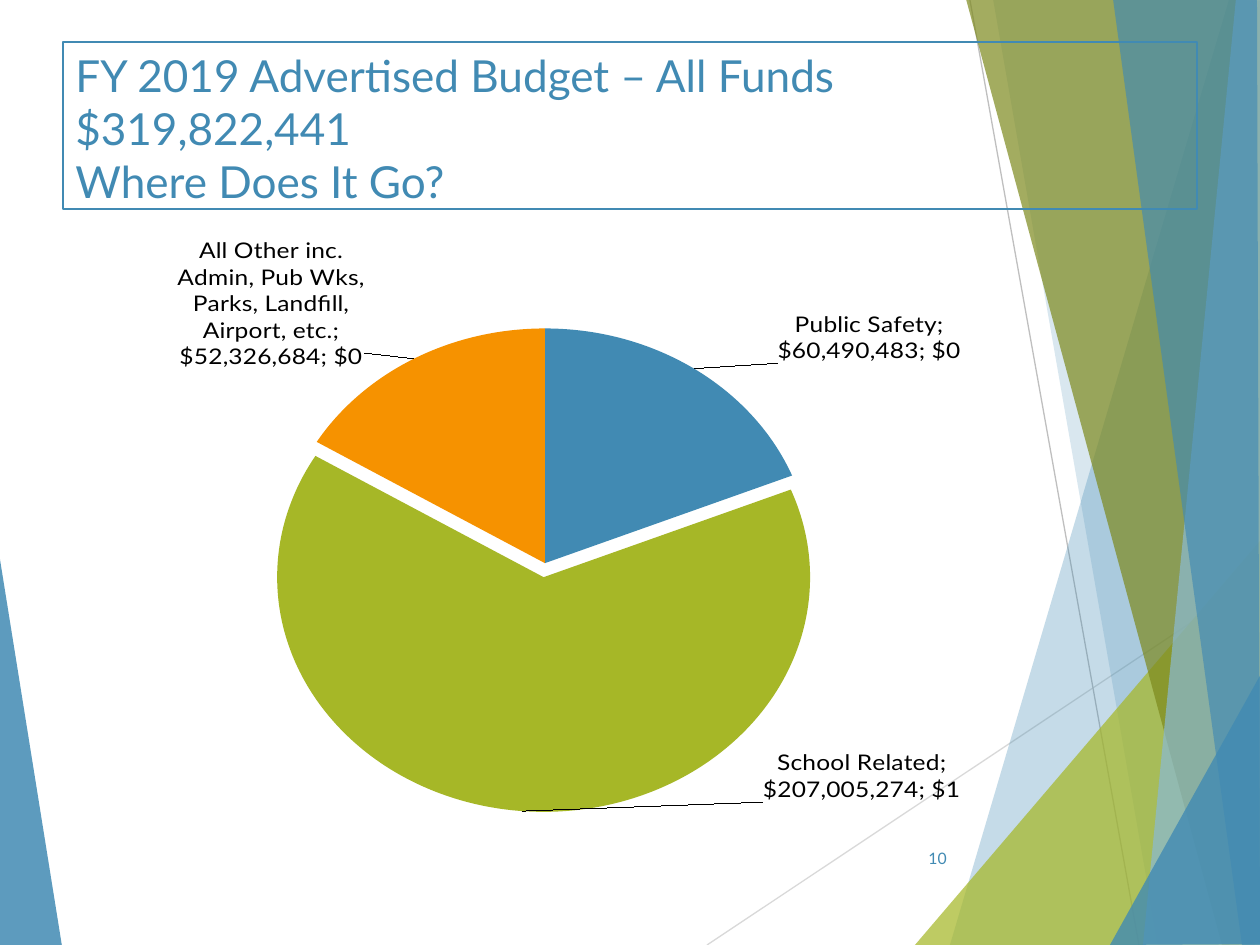
from lxml import etree
from pptx import Presentation
from pptx.chart.data import CategoryChartData
from pptx.dml.color import RGBColor
from pptx.enum.chart import XL_CHART_TYPE as ChartType, XL_LABEL_POSITION as LabelPosition
from pptx.enum.shapes import MSO_CONNECTOR as Connector
from pptx.enum.text import MSO_ANCHOR as Anchor, PP_ALIGN as Align
from pptx.oxml import parse_xml
from pptx.oxml.ns import nsdecls, qn
from pptx.util import Pt

EMU_PER_PX = 914400 / 126
FONT = "Lato"
BLUE, GREEN, OLIVE, ORANGE, SKY = "418AB3", "A6B727", "7D891D", "F69200", "8ABAD4"

# Corner points, colour, opacity in percent
LEFT_FACET = ([(-1, 553), (62, 946), (-1, 945)], BLUE, 85)
RIGHT_FACETS = [
    ([(1229, 0), (950, 945), (1263, 946), (1261, 1)], BLUE, 30),
    ([(993, -1), (1158, 945), (1261, 945), (1261, -1)], BLUE, 20),
    ([(915, 945), (1260, 541), (1261, 945)], GREEN, 72),
    ([(966, -1), (1222, 945), (1261, 944), (1261, -1)], OLIVE, 70),
    ([(1236, -1), (1143, 945), (1261, 945), (1260, -1)], SKY, 70),
    ([(1113, -1), (1242, 945), (1260, 945), (1257, -1)], BLUE, 65),
    ([(1110, 945), (1261, 674), (1261, 944)], BLUE, 80),
]
# Category, dollars, colour, label shift as a share of the chart
SPENDING = [
    ("Public Safety", 60490483, BLUE, (0.07, 0)),
    ("School Related", 207005274, GREEN, (0.3, -0.12)),
    ("All Other inc. Admin, Pub Wks, Parks, Landfill, Airport, etc.",
     52326684, ORANGE, (-0.04, 0)),
]


def px(*lengths):
    return [round(length * EMU_PER_PX) for length in lengths]


def rgb(code):
    return RGBColor.from_string(code)


def add_facet(slide, points, color, opacity):
    builder = slide.shapes.build_freeform(*points[0], scale=EMU_PER_PX)
    builder.add_line_segments(points[1:], close=True)
    facet = builder.convert_to_shape()
    facet.shadow.inherit = False
    facet.fill.solid()
    facet.fill.fore_color.rgb = rgb(color)
    facet.line.fill.background()
    srgb = facet._element.spPr.find(".//" + qn("a:srgbClr"))
    etree.SubElement(srgb, qn("a:alpha"), val=str(opacity * 1000))


def add_line(slide, ends, color):
    line = slide.shapes.add_connector(Connector.STRAIGHT, *px(*ends))
    line.line.color.rgb = rgb(color)
    line.line.width = Pt(0.75)
    etree.SubElement(line._element.spPr, qn("a:effectLst"))


def add_text(slide, box, lines, size, anchor=Anchor.TOP, align=Align.LEFT):
    text_box = slide.shapes.add_textbox(*px(*box))
    frame = text_box.text_frame
    frame.word_wrap = True
    frame.vertical_anchor = anchor
    paragraph = frame.paragraphs[0]
    paragraph.alignment = align
    for index, line in enumerate(lines):
        if index:
            paragraph.add_line_break()
        run = paragraph.add_run()
        run.text = line
        run.font.name, run.font.size = FONT, Pt(size)
        run.font.color.rgb = rgb(BLUE)
    return text_box


def inner_layout(x, y, w, h):
    return parse_xml(
        f'<c:layout {nsdecls("c")}><c:manualLayout><c:layoutTarget val="inner"/>'
        '<c:xMode val="edge"/><c:yMode val="edge"/>'
        f'<c:x val="{x}"/><c:y val="{y}"/><c:w val="{w}"/><c:h val="{h}"/>'
        '</c:manualLayout></c:layout>')


def shifted_label(index, x, y):
    return parse_xml(
        f'<c:dLbl {nsdecls("c")}><c:idx val="{index}"/><c:layout><c:manualLayout>'
        f'<c:x val="{x}"/><c:y val="{y}"/></c:manualLayout></c:layout>'
        '<c:dLblPos val="outEnd"/><c:showLegendKey val="0"/><c:showVal val="1"/>'
        '<c:showCatName val="1"/><c:showSerName val="0"/><c:showPercent val="1"/>'
        '<c:showBubbleSize val="0"/><c:separator>; </c:separator></c:dLbl>')


def add_spending_pie(slide, box):
    data = CategoryChartData(number_format='"$"#,##0')
    data.categories = [name for name, *_ in SPENDING]
    data.add_series("Series 1", [dollars for _, dollars, *_ in SPENDING])
    chart = slide.shapes.add_chart(ChartType.PIE, *px(*box), data).chart
    chart.has_legend = chart.has_title = False
    chart.font.name, chart.font.size = FONT, Pt(18)
    chart.font.color.rgb = rgb("000000")
    pie = chart.plots[0]
    pie.vary_by_categories = True
    series = pie.series[0]

    labels = series.data_labels
    labels.show_value = labels.show_percentage = labels.show_category_name = True
    labels.number_format, labels.number_format_is_linked = '"$"#,##0', False
    labels.position = LabelPosition.OUTSIDE_END
    labels.font.name, labels.font.size = FONT, Pt(14)
    labels.font.color.rgb = rgb("000000")
    label_xml = labels._element
    leader_lines = label_xml.find(qn("c:showLeaderLines"))
    if leader_lines is None:
        leader_lines = etree.SubElement(label_xml, qn("c:showLeaderLines"))
    leader_lines.set("val", "1")
    separator = etree.Element(qn("c:separator"))
    separator.text = "; "
    leader_lines.addprevious(separator)

    for index, (_, _, color, shift) in enumerate(SPENDING):
        fill = series.points[index].format.fill
        fill.solid()
        fill.fore_color.rgb = rgb(color)
        label_xml.insert(index, shifted_label(index, *shift))

    school = series._element.findall(qn("c:dPt"))[1]
    school.find(qn("c:spPr")).addprevious(
        parse_xml(f'<c:explosion {nsdecls("c")} val="6"/>'))

    plot_area = pie._element.getparent()
    for layout in plot_area.findall(qn("c:layout")):
        plot_area.remove(layout)
    plot_area.insert(0, inner_layout(0.19, 0.16, 0.47, 0.82))


def main():
    prs = Presentation()
    prs.slide_width, prs.slide_height = px(1260, 945)
    slide = prs.slides.add_slide(prs.slide_layouts[6])

    add_facet(slide, *LEFT_FACET)
    add_line(slide, (707, 945, 1261, 576), "D9D9D9")
    add_line(slide, (970, 0, 1139, 945), "BFBFBF")
    for facet in RIGHT_FACETS:
        add_facet(slide, *facet)

    title = add_text(slide, (63, 42, 1134, 167), [
        "FY 2019 Advertised Budget – All Funds", "$319,822,441",
        "Where Does It Go?"], 25.2)
    title.line.color.rgb = rgb(BLUE)
    title.line.width = Pt(0.75)
    add_spending_pie(slide, (63, 220, 1134, 651))
    add_text(slide, (888, 833, 71, 50), ["10"], 9, Anchor.MIDDLE, Align.RIGHT)
    prs.save("out.pptx")


if __name__ == "__main__":
    main()
